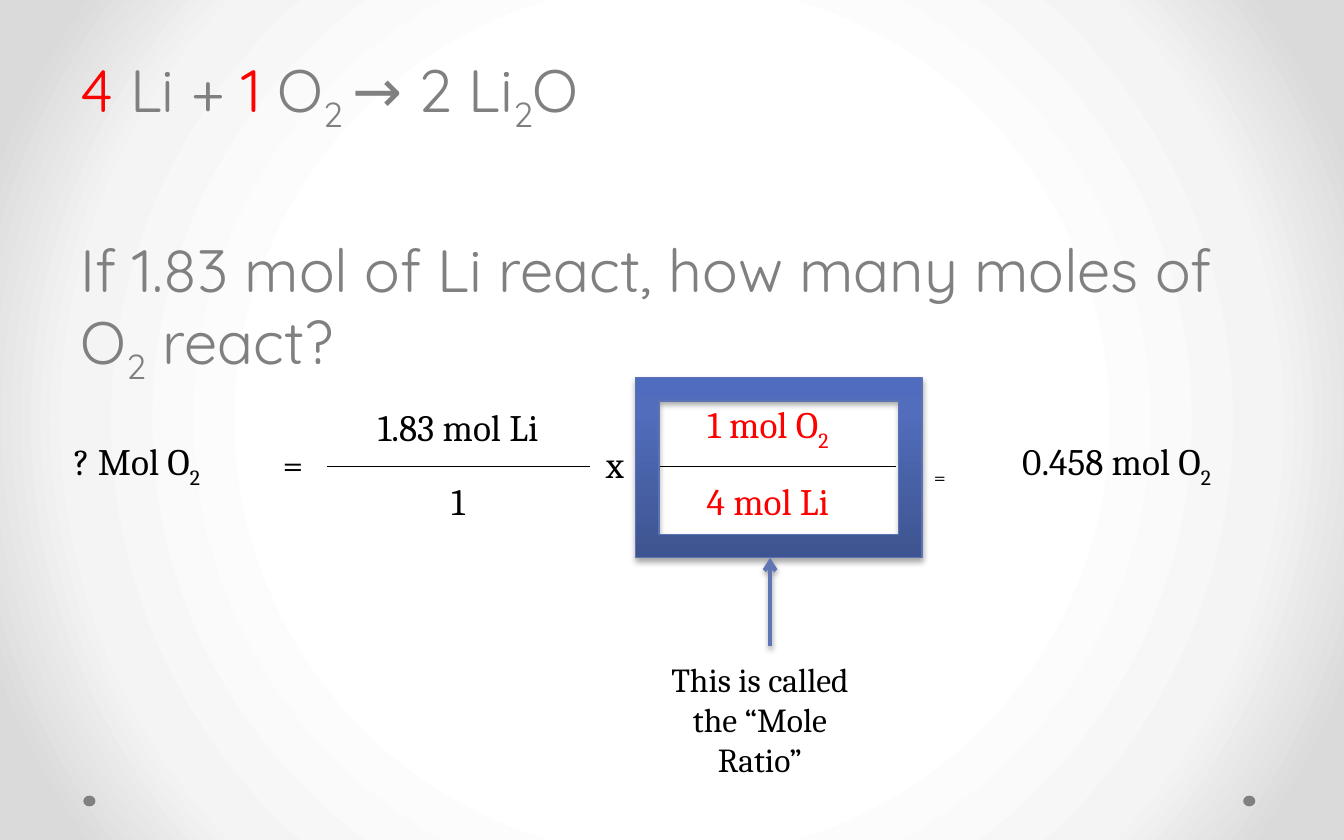
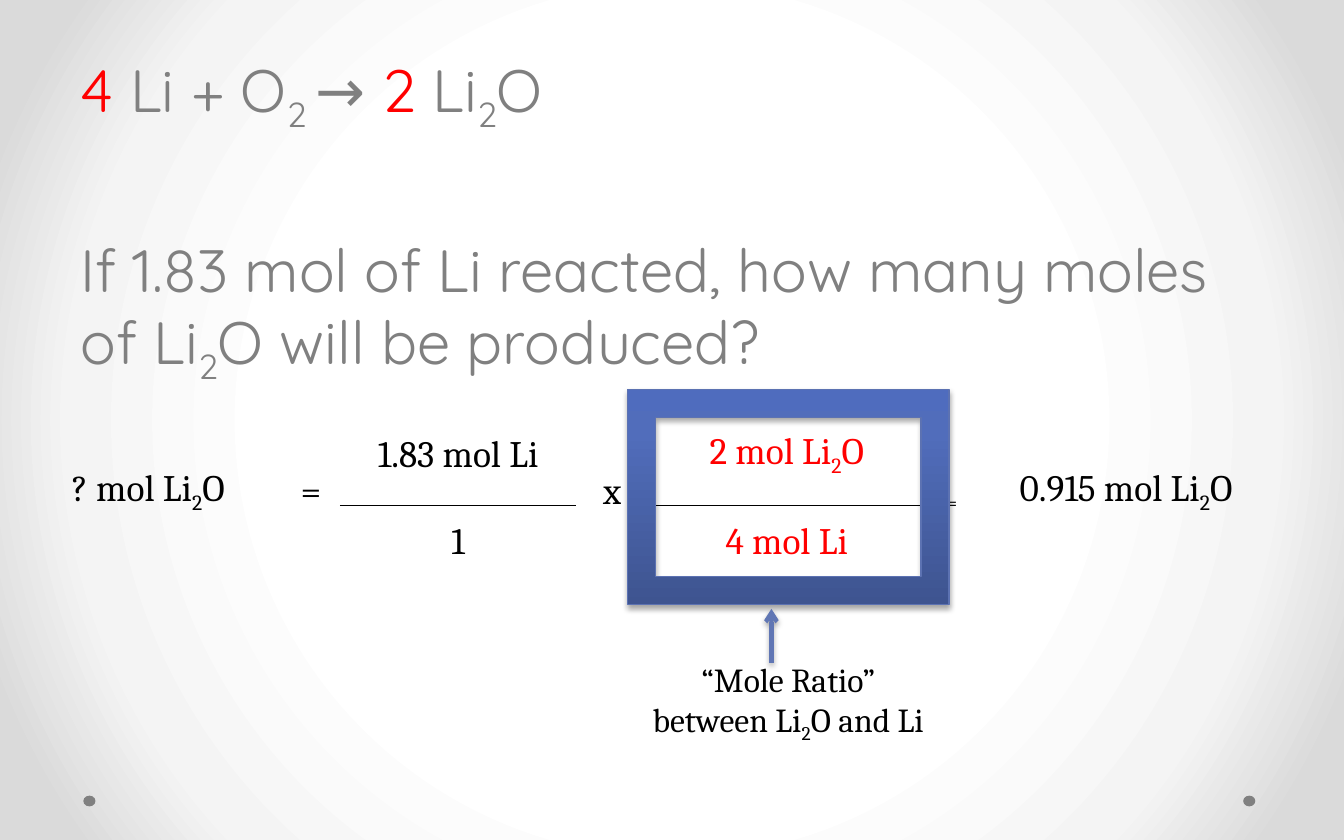
from pptx import Presentation
from pptx.dml.color import RGBColor
from pptx.enum.shapes import MSO_CONNECTOR, MSO_SHAPE
from pptx.enum.text import MSO_ANCHOR, MSO_AUTO_SIZE, PP_ALIGN
from pptx.oxml import parse_xml
from pptx.oxml.ns import nsdecls
from pptx.util import Inches, Pt

CENTER, LEFT = PP_ALIGN.CENTER, PP_ALIGN.LEFT
MIDDLE = MSO_ANCHOR.MIDDLE
ELLIPSE, FRAME = MSO_SHAPE.OVAL, MSO_SHAPE.FRAME
STRAIGHT = MSO_CONNECTOR.STRAIGHT

BLACK, GRAY, RED = "000000", "808080", "FF0000"
FRAME_EDGE, ARROW_BLUE = "5C72B2", "6076B4"
FRAME_STOPS = [(0, "3E5490"), (80, "516DBB"), (100, "4F6CBE")]
BACKGROUND_STOPS = [(50, "FFFFFF"), (76, "F4F4F4"), (92, "DADADA")]
UPWARD = '<a:lin ang="16200000" scaled="0"/>'
FROM_CENTER = ('<a:path path="circle"><a:fillToRect l="50000" t="50000" '
               'r="50000" b="50000"/></a:path>')
SHADOW = (f'<a:effectLst {nsdecls("a")}><a:outerShdw blurRad="39370" dist="22860" '
          'dir="5400000" rotWithShape="0"><a:srgbClr val="000000">'
          '<a:alpha val="35000"/></a:srgbClr></a:outerShdw></a:effectLst>')
PLAIN_TABLE = "{2D5ABB26-0587-4C30-8999-92F81FD0307C}"
FRACTION_COLUMNS = (2, 4)

rgb = RGBColor.from_string


def write(paragraph, text, size=20, font="Cambria", color=BLACK, align=CENTER):
    """Fill a paragraph; |...| marks red text and ~...~ marks a subscript."""
    paragraph.alignment = align
    for i, part in enumerate(text.split("|")):
        for j, piece in enumerate(part.split("~")):
            if not piece:
                continue
            run = paragraph.add_run()
            run.text = piece
            run.font.size = Pt(size)
            run.font.name = font
            run.font.color.rgb = rgb(RED if i % 2 else color)
            if j % 2:
                run._r.get_or_add_rPr().set("baseline", "-25000")


def gradient(stops, direction):
    marks = "".join(f'<a:gs pos="{share * 1000}"><a:srgbClr val="{color}"/></a:gs>'
                    for share, color in stops)
    return parse_xml(f'<a:gradFill {nsdecls("a")} rotWithShape="1">'
                     f'<a:gsLst>{marks}</a:gsLst>{direction}</a:gradFill>')


problems = [
    {
        "equation": "|4| Li + |1| O~2 ~→ 2 Li~2~O",
        "question": "If 1.83 mol of Li react, how many moles of O~2~ react?",
        "table_top": 2.92,
        "columns": [1.82, 0.5, 1.96, 0.37, 1.91, 0.65, 1.98],
        "rows": [0.55, 0.55],
        "upper": ["? Mol O~2~", "=", "1.83 mol Li", "x", "|1 mol O~2~|", "~=~",
                  "0.458 mol O~2~"],
        "frame": (4.73, 2.81, 2.13, 1.34),
        "arrow": (5.73, 4.81, 4.15),
        "caption": "This is called the “Mole Ratio”",
        "caption_span": (4.77, 1.77),
    },
    {
        "equation": "|4| Li + O~2 ~→ |2| Li~2~O",
        "question": "If 1.83 mol of Li reacted, how many moles of Li~2~O will be produced?",
        "table_top": 3.01,
        "columns": [1.99, 0.43, 1.76, 0.53, 2.07, 0.38, 2.22],
        "rows": [0.75, 0.55],
        "upper": ["? mol Li~2~O", "=", "1.83 mol Li", "x", "|2 mol Li~2~O|", "~=~",
                  "0.915 mol Li~2~O"],
        "frame": (4.67, 2.9, 2.39, 1.6),
        "arrow": (5.74, 4.93, 4.53),
        "caption": "“Mole Ratio” between Li~2~O and Li",
        "caption_span": (4.67, 2.39),
    },
]
denominators = dict(zip(FRACTION_COLUMNS, ("1", "|4 mol Li|")))

prs = Presentation()
prs.slide_width, prs.slide_height = Inches(10), Inches(6.25)
W, H = prs.slide_width, prs.slide_height

prs.slide_master.background.fill.solid()
background = prs.slide_master.element.xpath(".//p:bgPr")[0]
background.replace(background[0], gradient(BACKGROUND_STOPS, FROM_CENTER))

for problem in problems:
    slide = prs.slides.add_slide(prs.slide_layouts[1])
    shapes = slide.shapes
    unused_title = shapes.title.element
    unused_title.getparent().remove(unused_title)

    for dot_left in (0.925, 0.062):
        dot = shapes.add_shape(ELLIPSE, int(W * dot_left), Inches(5.92),
                               Inches(0.09), Inches(0.08))
        dot.shadow.inherit = False
        dot.fill.solid()
        dot.fill.fore_color.rgb = rgb(GRAY)
        dot.line.fill.background()

    # Equation and question
    body = slide.placeholders[1]
    body.left, body.top = int(W * 0.05), Inches(0.34)
    body.width, body.height = int(W * 0.9), Inches(5.24)
    body.text_frame.auto_size = MSO_AUTO_SIZE.NONE
    equation = body.text_frame.paragraphs[0]
    question = body.text_frame.add_paragraph()
    for paragraph, part, gap in ((equation, "equation", 0), (question, "question", 53)):
        write(paragraph, problem[part], size=32, font="Quicksand", color=GRAY, align=LEFT)
        paragraph.space_before = Pt(gap)
        properties = paragraph._p.get_or_add_pPr()
        properties.set("marL", "0")
        properties.set("indent", "0")
        properties.append(parse_xml(f'<a:buNone {nsdecls("a")}/>'))

    # Conversion laid out as fractions
    columns, rows = problem["columns"], problem["rows"]
    conversion = shapes.add_table(
        2, len(columns), Inches(0.11), Inches(problem["table_top"]),
        Inches(sum(columns)), Inches(sum(rows))).table
    conversion.first_row = conversion.horz_banding = False
    conversion._tbl.tblPr.xpath("a:tableStyleId")[0].text = PLAIN_TABLE
    for row, height in zip(conversion.rows, rows):
        row.height = Inches(height)
    for c, width in enumerate(columns):
        conversion.columns[c].width = Inches(width)
        upper, lower = conversion.cell(0, c), conversion.cell(1, c)
        contents = [(upper, problem["upper"][c], "lnB")]
        if c in FRACTION_COLUMNS:
            contents.append((lower, denominators[c], "lnT"))
        else:
            upper.merge(lower)
        for cell, text, edge in contents:
            cell.vertical_anchor = MIDDLE
            cell.fill.background()
            write(cell.text_frame.paragraphs[0], text)
            if c in FRACTION_COLUMNS:
                cell._tc.get_or_add_tcPr().insert(0, parse_xml(
                    f'<a:{edge} {nsdecls("a")} w="12700"><a:solidFill>'
                    f'<a:srgbClr val="{BLACK}"/></a:solidFill></a:{edge}>'))

    # Mole ratio callout
    ratio_frame = shapes.add_shape(FRAME, *map(Inches, problem["frame"]))
    ratio_frame.adjustments[0] = 0.13
    ratio_frame.line.color.rgb = rgb(FRAME_EDGE)
    ratio_frame.line.width = Pt(0.75)
    ratio_frame.fill.solid()
    frame_fill = ratio_frame._element.spPr.xpath("a:solidFill")[0]
    frame_fill.getparent().replace(frame_fill, gradient(FRAME_STOPS, UPWARD))
    ratio_frame._element.spPr.append(parse_xml(SHADOW))

    arrow_x, arrow_start, arrow_end = map(Inches, problem["arrow"])
    arrow = shapes.add_connector(STRAIGHT, arrow_x, arrow_start, arrow_x, arrow_end)
    arrow.line.color.rgb = rgb(ARROW_BLUE)
    arrow.line.width = Pt(2.25)
    arrow.line._get_or_add_ln().append(
        parse_xml(f'<a:tailEnd {nsdecls("a")} type="arrow"/>'))
    arrow._element.spPr.append(parse_xml(SHADOW))

    caption_left, caption_width = map(Inches, problem["caption_span"])
    caption = shapes.add_textbox(caption_left, Inches(4.85), caption_width, Inches(1.01))
    caption.text_frame.word_wrap = True
    write(caption.text_frame.paragraphs[0], problem["caption"], size=18)

prs.save("out.pptx")
